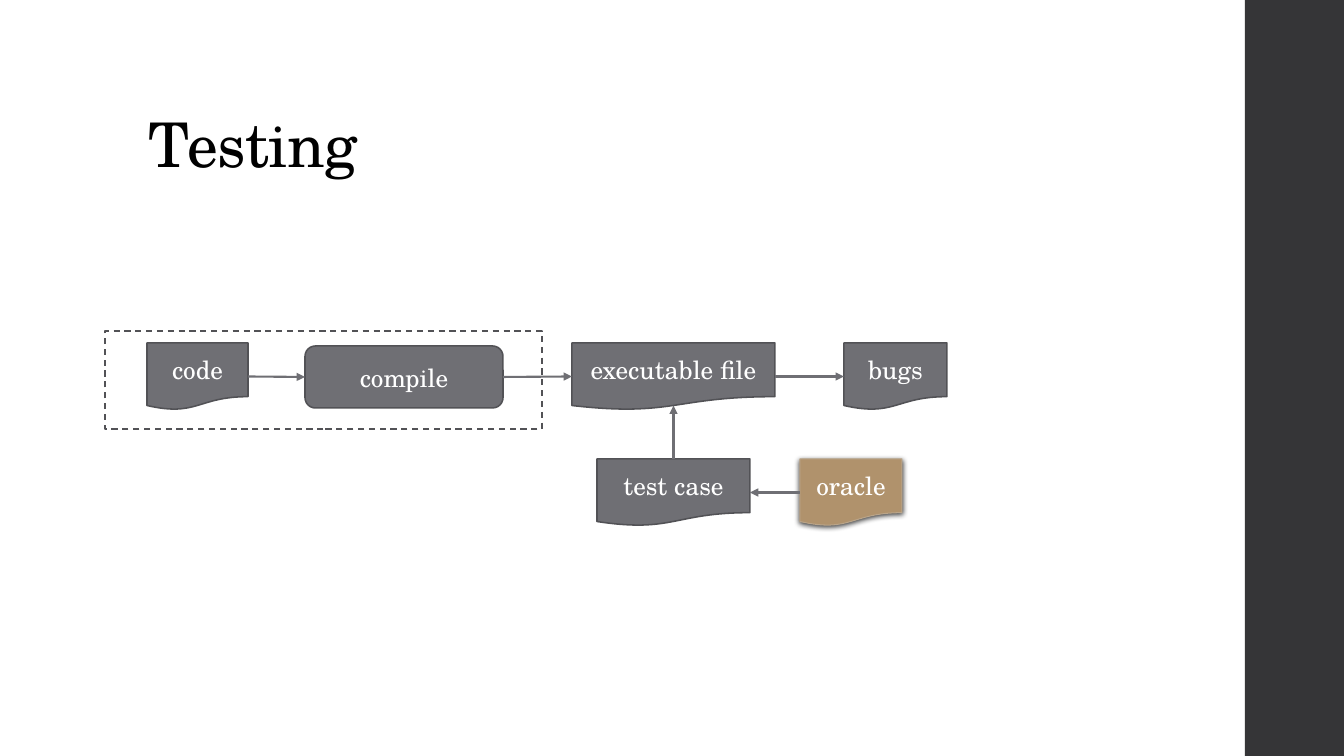
"""Build the Testing slide: a flow from code to bugs, with test case and oracle."""
from lxml import etree
from pptx import Presentation
from pptx.dml.color import RGBColor
from pptx.enum.dml import MSO_LINE
from pptx.enum.shapes import MSO_CONNECTOR, MSO_SHAPE
from pptx.enum.text import MSO_ANCHOR, PP_ALIGN
from pptx.oxml import parse_xml
from pptx.oxml.ns import nsdecls, qn
from pptx.util import Pt

RECTANGLE = MSO_SHAPE.RECTANGLE
ROUNDED = MSO_SHAPE.ROUNDED_RECTANGLE
DOCUMENT = MSO_SHAPE.FLOWCHART_DOCUMENT
STRAIGHT = MSO_CONNECTOR.STRAIGHT
DASH = MSO_LINE.DASH
CENTER = PP_ALIGN.CENTER
MIDDLE, BOTTOM = MSO_ANCHOR.MIDDLE, MSO_ANCHOR.BOTTOM
TOP_SIDE, LEFT_SIDE, BOTTOM_SIDE, RIGHT_SIDE = range(4)

FONT = "TeX Gyre Schola"
GRAY, EDGE, WHITE = "6F6F74", "525256", "FFFFFF"
TAN, TAN_EDGE = "B0926C", "B9A489"
PAGE_SIZE = (1344, 756)
SCALE = 914400 / 100.8
DOCUMENT_BOTTOM = 20172 / 21600

TITLE = ("Testing", (139, 40, 1068, 146))
SIDEBAR = (1245, 0, 99, 756)
COMPILE_FRAME = (105, 331, 437, 98)
STEPS = [
    ("code", DOCUMENT, (147, 343, 101, 67)),
    ("compile", ROUNDED, (305, 346, 198, 62)),
    ("executable file", DOCUMENT, (572, 343, 203, 67)),
    ("bugs", DOCUMENT, (844, 343, 103, 67)),
    ("test case", DOCUMENT, (597, 459, 153, 67)),
    ("oracle", DOCUMENT, (800, 459, 102, 67)),
]
ARROWS = [
    ("code", RIGHT_SIDE, "compile", LEFT_SIDE),
    ("compile", RIGHT_SIDE, "executable file", LEFT_SIDE),
    ("executable file", RIGHT_SIDE, "bugs", LEFT_SIDE),
    ("test case", TOP_SIDE, "executable file", BOTTOM_SIDE),
    ("oracle", LEFT_SIDE, "test case", RIGHT_SIDE),
]


def emu(pixels):
    return round(pixels * SCALE)


def color(value):
    return RGBColor.from_string(value)


def write(box, text, size=18, ink=WHITE, align=CENTER, anchor=MIDDLE, line_spacing=1.0, spacing=0):
    frame = box.text_frame
    frame.word_wrap = True
    frame.vertical_anchor = anchor
    para = frame.paragraphs[0]
    para.alignment = align
    para.line_spacing = line_spacing
    span = para.add_run()
    span.text = text
    span.font.name = FONT
    span.font.size = Pt(size)
    span.font.color.rgb = color(ink)
    if spacing:
        span.font._element.set("spc", str(round(spacing * 100)))


def add_box(page, kind, place, fill=None, edge=None, width=1.1):
    box = page.shapes.add_shape(kind, *map(emu, place))
    box.shadow.inherit = False
    if fill:
        box.fill.solid()
        box.fill.fore_color.rgb = color(fill)
    else:
        box.fill.background()
    if edge:
        box.line.color.rgb = color(edge)
        box.line.width = Pt(width)
    else:
        box.line.fill.background()
    return box


def add_shadow(box):
    effects = box._element.spPr.find(qn("a:effectLst"))
    effects.append(parse_xml(
        f'<a:outerShdw {nsdecls("a")} blurRad="50800" dist="15240" dir="5400000" rotWithShape="0">'
        '<a:srgbClr val="000000"><a:alpha val="75000"/></a:srgbClr></a:outerShdw>'))


def add_arrow(page, start, start_side, end, end_side):
    arrow = page.shapes.add_connector(STRAIGHT, 0, 0, 0, 0)
    arrow.begin_connect(start, start_side)
    arrow.end_connect(end, end_side)
    if end_side == BOTTOM_SIDE:
        arrow.end_y = end.top + round(end.height * DOCUMENT_BOTTOM)
    arrow.line.color.rgb = color(GRAY)
    arrow.line.width = Pt(1.5)
    etree.SubElement(arrow.line._get_or_add_ln(), qn("a:tailEnd"), type="triangle")
    etree.SubElement(arrow._element.spPr, qn("a:effectLst"))


def main():
    deck = Presentation()
    deck.slide_width, deck.slide_height = map(emu, PAGE_SIZE)
    page = deck.slides.add_slide(deck.slide_layouts[6])

    add_box(page, RECTANGLE, SIDEBAR, fill="353537")
    text, place = TITLE
    title = page.shapes.add_textbox(*map(emu, place))
    write(title, text, size=44, ink="000000", align=PP_ALIGN.LEFT, anchor=BOTTOM,
          line_spacing=0.9, spacing=-0.5)

    steps = {}
    for name, kind, place in STEPS:
        if name == "oracle":
            steps[name] = add_box(page, kind, place, TAN, TAN_EDGE, 0.75)
            add_shadow(steps[name])
        else:
            steps[name] = add_box(page, kind, place, GRAY, EDGE)
        write(steps[name], name)

    for start, start_side, end, end_side in ARROWS:
        add_arrow(page, steps[start], start_side, steps[end], end_side)

    frame = add_box(page, RECTANGLE, COMPILE_FRAME, edge=EDGE)
    frame.line.dash_style = DASH
    deck.save("out.pptx")


if __name__ == "__main__":
    main()
